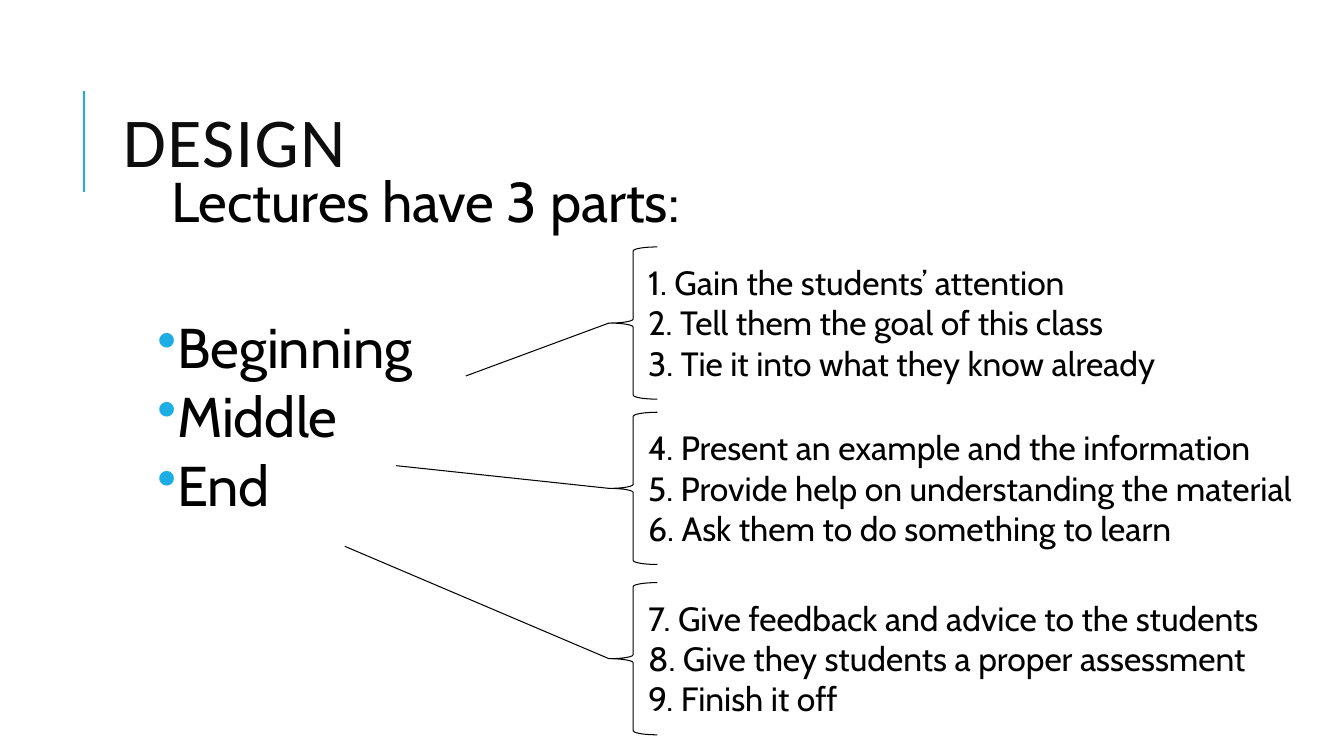
from lxml import etree
from pptx import Presentation
from pptx import util as u
from pptx.dml.color import RGBColor
from pptx.enum import shapes, text
from pptx.oxml.ns import qn

PX = 9144  # 100 px to the inch
COLORS = {"accent": "1CADE4", "title": "0D0D0D", "ink": "000000"}

presentation = Presentation()
presentation.slide_width, presentation.slide_height = 1333 * PX, 750 * PX
slide = presentation.slides.add_slide(presentation.slide_layouts[6])


def add_text(box, paragraphs, font, size, color, inset=None, anchor=text.MSO_ANCHOR.TOP):
    """Add a text box; each paragraph is (text, format values, left indent, hanging, bullet)."""
    frame = slide.shapes.add_textbox(*(value * PX for value in box)).text_frame
    frame.word_wrap = True
    frame.vertical_anchor = anchor
    if inset is not None:
        for side in ("left", "right", "top", "bottom"):
            setattr(frame, f"margin_{side}", inset * PX)
    for index, (words, values, left, hanging, bullet) in enumerate(paragraphs):
        paragraph = frame.add_paragraph() if index else frame.paragraphs[0]
        properties = paragraph._p.get_or_add_pPr()
        properties.set("marL", str(left * PX))
        properties.set("indent", str(-hanging * PX))
        if bullet:
            bullet_color = etree.SubElement(properties, qn("a:buClr"))
            etree.SubElement(bullet_color, qn("a:srgbClr"), val=COLORS["accent"])
            etree.SubElement(properties, qn("a:buChar"), char=bullet)
        for name, value in values.items():
            setattr(paragraph, name, value)
        run = paragraph.add_run()
        run.text = words
        run.font.name, run.font.size = font, u.Pt(size)
        run.font.color.rgb = RGBColor.from_string(COLORS[color])
    return frame


def add_line(start, end, color, width):
    line = slide.shapes.add_connector(
        shapes.MSO_CONNECTOR.STRAIGHT, *(value * PX for value in start + end))
    line.line.color.rgb = RGBColor.from_string(COLORS[color])
    line.line.width = u.Pt(width)
    etree.SubElement(line._element.spPr, qn("a:effectLst"))
    return line


add_line((83, 190), (83, 90), "accent", 1.5)

title = add_text((112, 64, 1063, 164), [("DESIGN", {"line_spacing": 0.8}, 0, 0, None)],
                 "Calibri", 50, "title", anchor=text.MSO_ANCHOR.MIDDLE)
title.paragraphs[0].runs[0].font._element.set("spc", "100")

heading_format = {"line_spacing": 0.9, "space_after": u.Pt(2)}
part_format = {"line_spacing": 0.9, "space_before": u.Pt(2), "space_after": u.Pt(4)}
first_part_format = {**part_format, "space_before": u.Pt(59)}
add_text((137, 168, 1113, 541), [
    ("Lectures have 3 parts:", heading_format, 10, 10, " "),
    ("Beginning", first_part_format, 29, 15, "•"),
    ("Middle", part_format, 29, 15, "•"),
    ("End", part_format, 29, 15, "•"),
], "Cabin", 40, "ink", inset=5)

# Top of each brace, the end of its line beside the lecture part, and its steps
step_groups = [
    (245, (462, 373), ["1. Gain the students’ attention",
                       "2. Tell them the goal of this class",
                       "3. Tie it into what they know already"]),
    (409, (393, 462), ["4. Present an example and the information",
                       "5. Provide help on understanding the material",
                       "6. Ask them to do something to learn"]),
    (578, (342, 542), ["7. Give feedback and advice to the students",
                       "8. Give they students a proper assessment",
                       "9. Finish it off"]),
]
for top, line_end, steps in step_groups:
    add_text((583, top + 10, 717, 131), [(step, {}, 50, 0, None) for step in steps],
             "Cabin", 24, "ink")
    brace = slide.shapes.add_shape(
        shapes.MSO_SHAPE.LEFT_BRACE, 604 * PX, top * PX, 48 * PX, 151 * PX)
    brace.shadow.inherit = False
    brace.fill.background()
    brace.line.color.rgb = RGBColor.from_string(COLORS["ink"])
    brace.line.width = u.Pt(0.75)
    line = add_line((604, top + 76), line_end, "ink", 0.75)
    line.begin_connect(brace, 1)

presentation.save("out.pptx")
